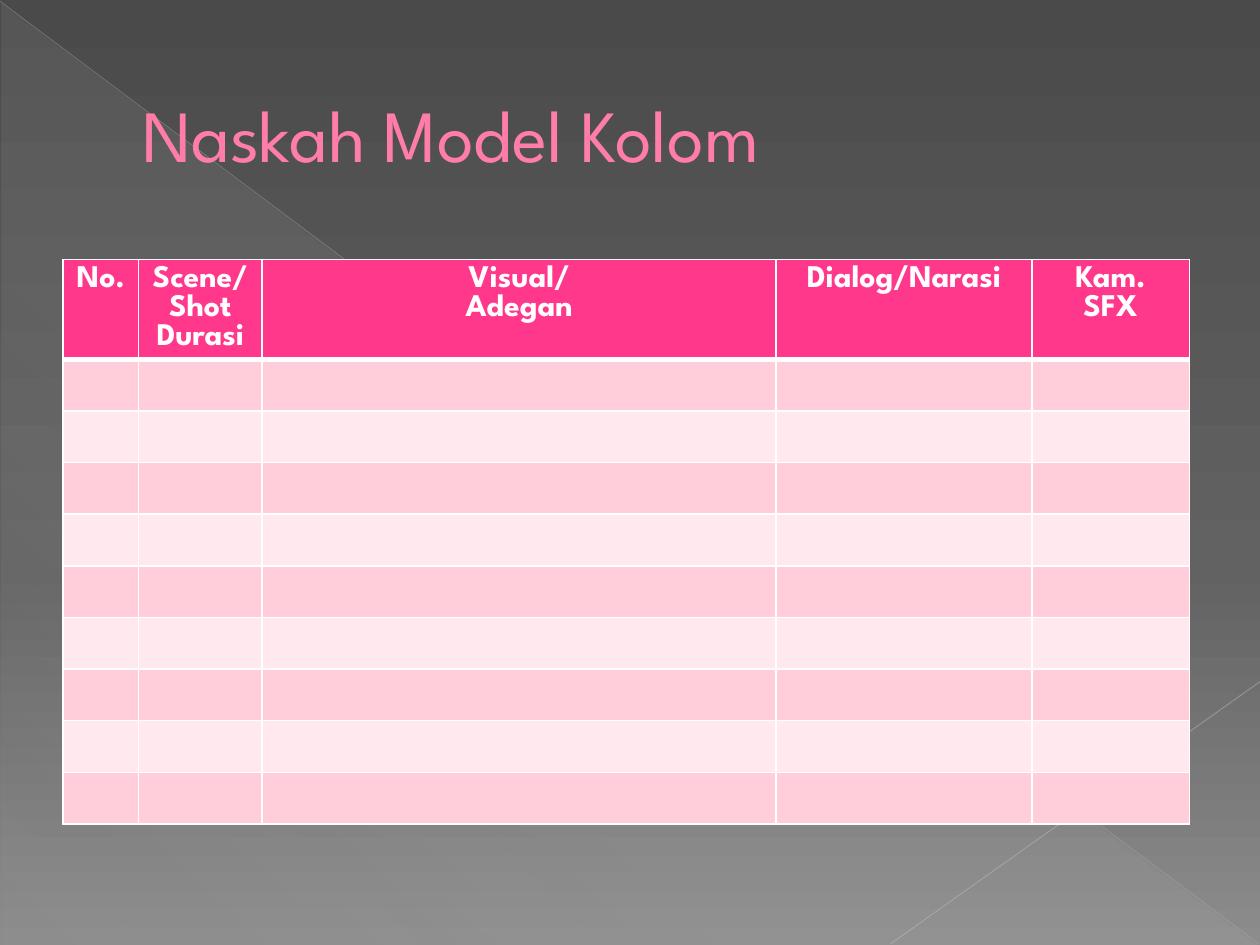
from lxml import etree
from pptx import Presentation
from pptx.dml.color import RGBColor
from pptx.enum.shapes import MSO_CONNECTOR, MSO_SHAPE
from pptx.enum.text import MSO_ANCHOR, PP_ALIGN
from pptx.oxml import parse_xml
from pptx.oxml.ns import nsdecls, qn
from pptx.util import Inches, Pt

STRAIGHT = MSO_CONNECTOR.STRAIGHT
TRIANGLE = MSO_SHAPE.RIGHT_TRIANGLE
MIDDLE = MSO_ANCHOR.MIDDLE
LEFT, CENTER = PP_ALIGN.LEFT, PP_ALIGN.CENTER

FONT = "League Spartan"
COLORS = {
    "title": "FF7DA7", "title outline": "B12761", "header": "FF388C",
    "odd row": "FFCEDA", "even row": "FFE8EE", "white": "FFFFFF",
}

TITLE = "Naskah Model Kolom"
COLUMNS = [  # heading paragraphs, width
    (["No."], 0.6),
    (["Scene/Shot", "Durasi"], 0.98),
    (["Visual/", "Adegan"], 4.08),
    (["Dialog/Narasi"], 2.03),
    (["Kam.", "SFX"], 1.25),
]
BODY_ROWS = 9
HEADER_HEIGHT, BODY_HEIGHT = 0.78, 0.41

# Gradient stops: position %, colour, opacity %
PAGE_STOPS = [(0, "4A4A4A", 100), (60, "626262", 100), (100, "8C8C8C", 100)]
TRIANGLE_STOPS = [(0, "D2D2D2", 10), (70, "D2D2D2", 8), (100, "D2D2D2", 1)]
DIAGONALS = [  # start, end, colour, width in points, opacity %
    ((0, 0.01), (9.99, 7.49), "BFBFBF", 0.39, 35),
    ((10, 5.41), (7.07, 7.49), "C6C6C6", 0.47, 45),
]


def color(name):
    return RGBColor.from_string(COLORS[name])


def set_gradient(parent, stops, angle):
    """Replace the solid fill under parent; the angle runs clockwise."""
    stop_xml = "".join(
        f'<a:gs pos="{position * 1000}"><a:srgbClr val="{value}">'
        f'<a:alpha val="{opacity * 1000}"/></a:srgbClr></a:gs>'
        for position, value, opacity in stops)
    gradient = parse_xml(
        f'<a:gradFill {nsdecls("a")} rotWithShape="1"><a:gsLst>{stop_xml}</a:gsLst>'
        f'<a:lin ang="{angle * 60000}" scaled="0"/></a:gradFill>')
    parent.replace(parent.find(qn("a:solidFill")), gradient)


def add_diagonal(page, start, end, value, width, opacity):
    line = page.shapes.add_connector(STRAIGHT, *map(Inches, start + end))
    line.line.width = Pt(width)
    line.line.color.rgb = RGBColor.from_string(value)
    properties = line._element.spPr
    shade = properties.find(".//" + qn("a:srgbClr"))
    etree.SubElement(shade, qn("a:alpha"), val=str(opacity * 1000))
    etree.SubElement(properties, qn("a:effectLst"))


def format_font(font, **values):
    font.color.rgb = color(values.pop("color"))
    for name, value in values.items():
        setattr(font, name, value)


def set_borders(cell, bottom):
    properties = cell._tc.get_or_add_tcPr()
    widths = {"lnL": 1, "lnR": 1, "lnT": 1, "lnB": bottom}
    for index, (side, width) in enumerate(widths.items()):
        properties.insert(index, parse_xml(
            f'<a:{side} {nsdecls("a")} w="{Pt(width)}"><a:solidFill>'
            f'<a:srgbClr val="{COLORS["white"]}"/></a:solidFill></a:{side}>'))


def add_background(page):
    page.background.fill.solid()
    set_gradient(page.element.find(".//" + qn("p:bgPr")), PAGE_STOPS, 90)
    triangle = page.shapes.add_shape(
        TRIANGLE, *map(Inches, (0.01, 0.02, 9.98, 7.48)))
    triangle.shadow.inherit = False
    triangle.line.fill.background()
    triangle.fill.solid()
    set_gradient(triangle._element.spPr, TRIANGLE_STOPS, 133)
    for diagonal in DIAGONALS:
        add_diagonal(page, *diagonal)


def add_title(page):
    title = page.shapes.title
    title.left, title.top, title.width, title.height = map(
        Inches, (0.5, 0.29, 9, 1.53))
    title.text_frame.vertical_anchor = MIDDLE
    para = title.text_frame.paragraphs[0]
    para.alignment = LEFT
    para._p.get_or_add_pPr().set("marL", str(Inches(0.53)))
    span = para.add_run()
    span.text = TITLE
    format_font(span.font, name=FONT, size=Pt(42), color="title")
    span._r.get_or_add_rPr().insert(0, parse_xml(
        f'<a:ln {nsdecls("a")} w="{Pt(0.5)}"><a:solidFill>'
        f'<a:srgbClr val="{COLORS["title outline"]}"/></a:solidFill></a:ln>'))
    # Bring the title in front of the background shapes
    page.shapes._spTree.append(title._element)


def add_script_table(page):
    heights = [HEADER_HEIGHT] + [BODY_HEIGHT] * BODY_ROWS
    width = sum(column_width for _, column_width in COLUMNS)
    table = page.shapes.add_table(
        len(heights), len(COLUMNS), Inches(0.5), Inches(2.06),
        Inches(width), Inches(sum(heights))).table
    for row, height in zip(table.rows, heights):
        row.height = Inches(height)
    for column, (heading, column_width) in enumerate(COLUMNS):
        table.columns[column].width = Inches(column_width)
        for row in range(len(heights)):
            cell = table.cell(row, column)
            fill = "header" if row == 0 else "odd row" if row % 2 else "even row"
            cell.fill.solid()
            cell.fill.fore_color.rgb = color(fill)
            set_borders(cell, bottom=1 if row else 3)
        frame = table.cell(0, column).text_frame
        frame.text = "\n".join(heading)
        for para in frame.paragraphs:
            para.alignment = CENTER
            format_font(para.runs[0].font, name=FONT, size=Pt(18),
                        bold=True, color="white")


def main():
    deck = Presentation()
    deck.slide_width, deck.slide_height = Inches(10), Inches(7.5)
    page = deck.slides.add_slide(deck.slide_layouts[5])
    add_background(page)
    add_title(page)
    add_script_table(page)
    deck.save("out.pptx")


if __name__ == "__main__":
    main()
